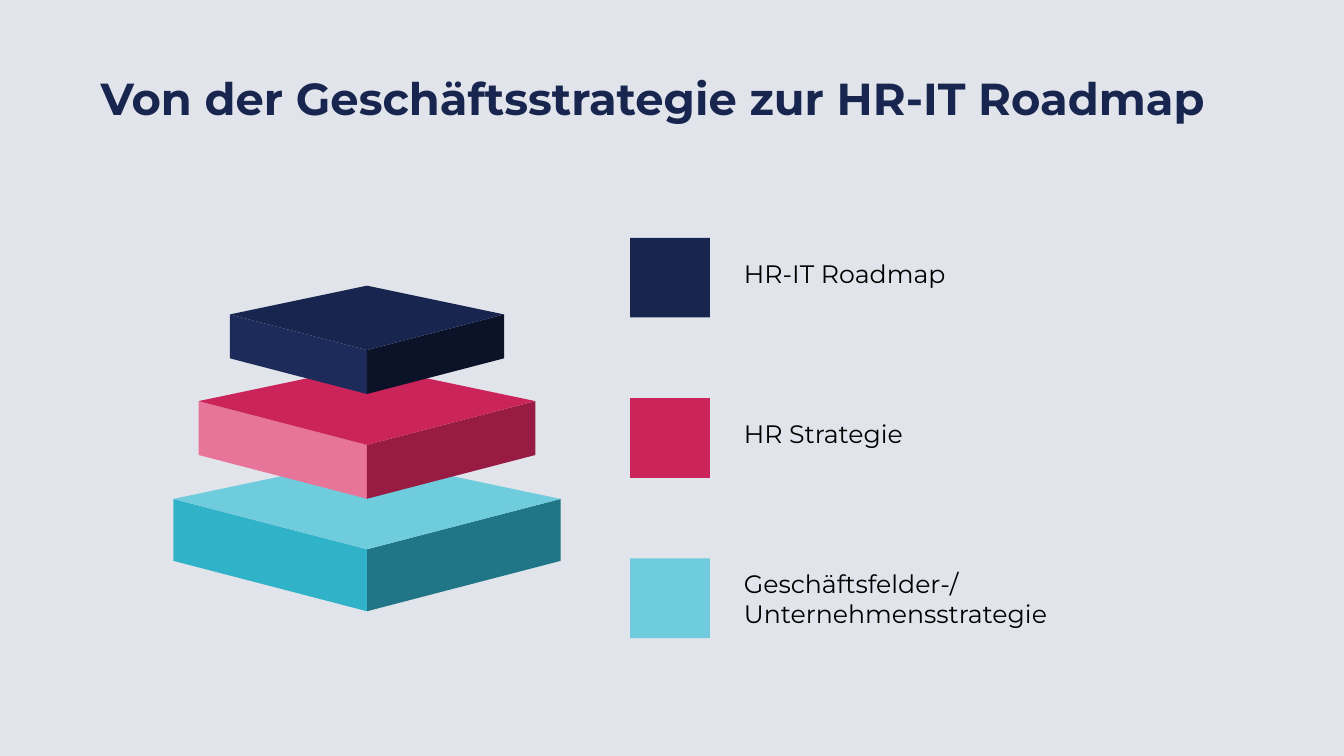
from dataclasses import dataclass

from pptx import Presentation
from pptx.dml.color import RGBColor
from pptx.enum.shapes import MSO_SHAPE
from pptx.enum.text import MSO_ANCHOR
from pptx.util import Inches, Pt


@dataclass(frozen=True)
class Theme:
    font: str = "Montserrat"
    title_size: int = 32
    label_size: int = 18
    background: str = "E2E4EB"
    text: str = "000000"
    navy: str = "18254F"
    navy_left: str = "1C2B5A"
    navy_right: str = "0C1228"
    pink: str = "CB245B"
    pink_left: str = "E7759A"
    pink_right: str = "981B44"
    cyan: str = "6FCCDD"
    cyan_left: str = "30B2C9"
    cyan_right: str = "207686"


THEME = Theme()
STACK_CENTER = 3.64
BACK_RISE, FRONT_DROP, THICKNESS = 0.21, 0.26, 0.32
SWATCH_LEFT, SWATCH_TOP, SWATCH_SIZE, SWATCH_STEP = 6.25, 2.36, 0.79, 1.59
LABEL_LEFT, LABEL_WIDTH = 7.28, 5.86

LAYERS = [
    (["HR-IT Roadmap"], 1.36, 3.12,
     (THEME.navy, THEME.navy_left, THEME.navy_right)),
    (["HR Strategie"], 1.67, 3.98,
     (THEME.pink, THEME.pink_left, THEME.pink_right)),
    (["Geschäftsfelder-/", "Unternehmensstrategie"], 1.92, 4.95,
     (THEME.cyan, THEME.cyan_left, THEME.cyan_right)),
]


def paint(shape, color):
    shape.shadow.inherit = False
    shape.fill.solid()
    shape.fill.fore_color.rgb = RGBColor.from_string(color)
    shape.line.fill.background()


def add_text(slide, lines, left, top, width, height, size=THEME.label_size,
             color=THEME.text, bold=False, spacing=1.0, anchor=MSO_ANCHOR.TOP):
    frame = slide.shapes.add_textbox(
        Inches(left), Inches(top), Inches(width), Inches(height)).text_frame
    frame.word_wrap = True
    frame.vertical_anchor = anchor
    frame.text = "\n".join(lines)
    for paragraph in frame.paragraphs:
        paragraph.line_spacing = spacing
        paragraph.font.name = THEME.font
        paragraph.font.size = Pt(size)
        paragraph.font.bold = bold
        paragraph.font.color.rgb = RGBColor.from_string(color)


def add_face(slide, corners, color):
    start, *others = [(Inches(x), Inches(y)) for x, y in corners]
    outline = slide.shapes.build_freeform(*start)
    outline.add_line_segments(others, close=True)
    paint(outline.convert_to_shape(), color)


def add_block(slide, half_width, side_y, colors):
    top_color, left_color, right_color = colors
    front_y = side_y + FRONT_DROP * half_width
    thickness = THICKNESS * half_width
    left, right = STACK_CENTER - half_width, STACK_CENTER + half_width
    for edge, color in ((left, left_color), (right, right_color)):
        add_face(slide, [(edge, side_y), (STACK_CENTER, front_y),
                         (STACK_CENTER, front_y + thickness),
                         (edge, side_y + thickness)], color)
    add_face(slide, [(left, side_y),
                     (STACK_CENTER, side_y - BACK_RISE * half_width),
                     (right, side_y), (STACK_CENTER, front_y)], top_color)


def add_legend_entry(slide, row, lines, color):
    top = SWATCH_TOP + row * SWATCH_STEP
    swatch = slide.shapes.add_shape(
        MSO_SHAPE.RECTANGLE, Inches(SWATCH_LEFT), Inches(top),
        Inches(SWATCH_SIZE), Inches(SWATCH_SIZE))
    paint(swatch, color)
    single = len(lines) == 1
    add_text(slide, lines, LABEL_LEFT, top, LABEL_WIDTH, SWATCH_SIZE,
             spacing=1.5 if single else 1.0,
             anchor=MSO_ANCHOR.TOP if single else MSO_ANCHOR.MIDDLE)


def main():
    deck = Presentation()
    deck.slide_width, deck.slide_height = Inches(13.33), Inches(7.5)
    slide = deck.slides.add_slide(deck.slide_layouts[6])
    slide.background.fill.solid()
    slide.background.fill.fore_color.rgb = RGBColor.from_string(THEME.background)

    add_text(slide, ["Von der Geschäftsstrategie zur HR-IT Roadmap"],
             0.9, 0.71, 12.2, 0.52, size=THEME.title_size, color=THEME.navy,
             bold=True, spacing=0.9)
    for _, half_width, side_y, colors in reversed(LAYERS):
        add_block(slide, half_width, side_y, colors)
    for row, (lines, _, _, colors) in enumerate(LAYERS):
        add_legend_entry(slide, row, lines, colors[0])

    deck.save("out.pptx")


if __name__ == "__main__":
    main()
